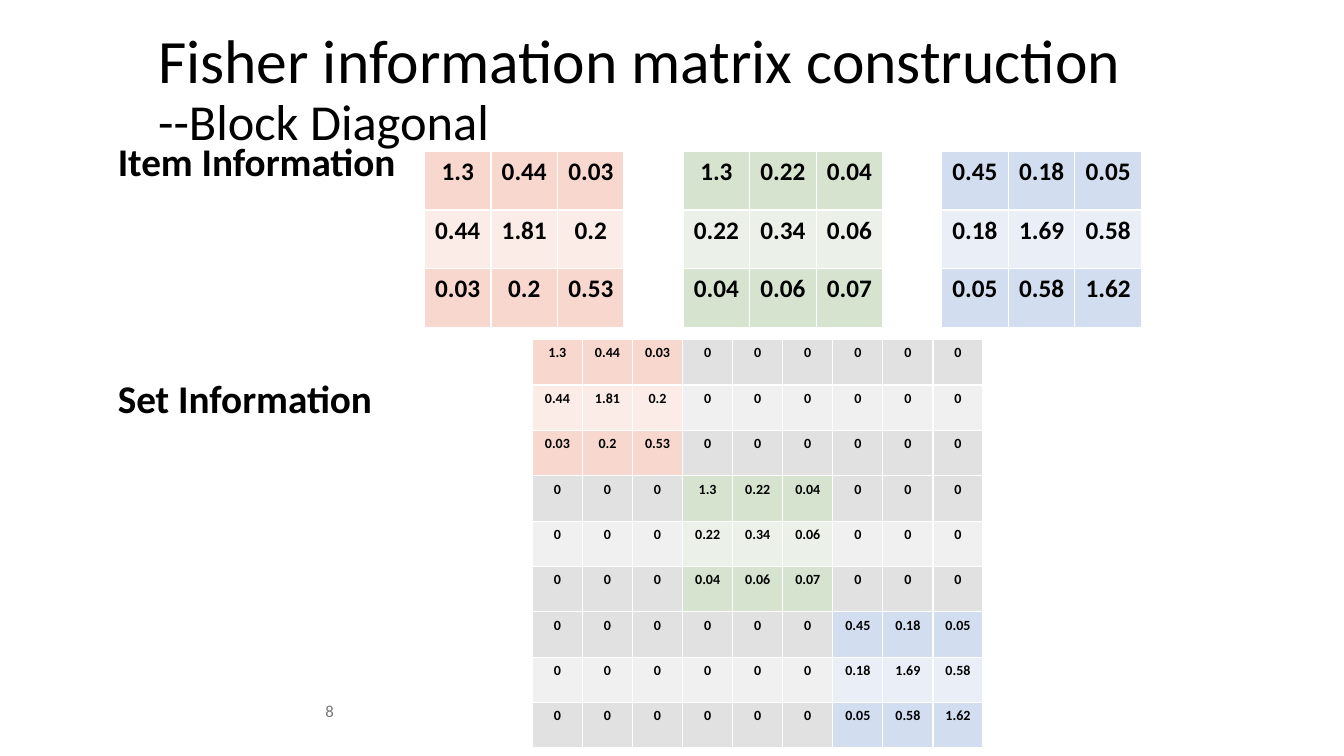
import pptx
import pptx.util
import pptx.dml.color
import pptx.enum.text
import lxml.etree
from pptx.oxml.ns import qn

Inches, Pt = pptx.util.Inches, pptx.util.Pt
RGB = pptx.dml.color.RGBColor
ALIGN = pptx.enum.text.PP_ALIGN
ANCHOR = pptx.enum.text.MSO_ANCHOR

BLACK = RGB(0x00, 0x00, 0x00)
GRAY = RGB(0x79, 0x79, 0x79)
# Colours of odd and even rows
ORANGES = (RGB(0xF8, 0xD7, 0xCE), RGB(0xFC, 0xEC, 0xE8))
GREENS = (RGB(0xD5, 0xE3, 0xCF), RGB(0xEB, 0xF1, 0xE9))
BLUES = (RGB(0xD2, 0xDE, 0xEF), RGB(0xEA, 0xEF, 0xF7))
GRAYS = (RGB(0xE1, 0xE1, 0xE1), RGB(0xF0, 0xF0, 0xF0))

TITLE = [("Fisher information matrix construction", 44), ("--Block Diagonal", 36)]
LABELS = ["Item Information", "Set Information"]
PAGE = "8"
ITEMS = [
    ([["1.3", "0.44", "0.03"], ["0.44", "1.81", "0.2"], ["0.03", "0.2", "0.53"]], ORANGES),
    ([["1.3", "0.22", "0.04"], ["0.22", "0.34", "0.06"], ["0.04", "0.06", "0.07"]], GREENS),
    ([["0.45", "0.18", "0.05"], ["0.18", "1.69", "0.58"], ["0.05", "0.58", "1.62"]], BLUES),
]
ZERO = ([["0"] * 3] * 3, GRAYS)

# Left, top, block width, block height, in inches
ITEM_LEFT, ITEM_TOP, ITEM_W, ITEM_H = 4.21, 1.5, 1.98, 1.75
ITEM_PITCH = 2.565
SET_LEFT, SET_TOP, SET_W, SET_H = 5.28, 3.37, 1.49, 1.35


def style(font, size, color=BLACK, bold=False):
    values = {"name": "Calibri", "size": Pt(size), "bold": bold}
    for name, value in values.items():
        setattr(font, name, value)
    font.color.rgb = color


def add_text_box(s, left, top, width, height, anchor=ANCHOR.TOP):
    tf = s.shapes.add_textbox(*map(Inches, (left, top, width, height))).text_frame
    tf.word_wrap = True
    tf.vertical_anchor = anchor
    return tf


def add_white_borders(cell):
    """Put a 1 pt white line on each side, ahead of the cell's fill."""
    tc_pr = cell._tc.get_or_add_tcPr()
    for i, side in enumerate(("lnL", "lnR", "lnT", "lnB")):
        ln = lxml.etree.Element(qn("a:" + side), w=str(Pt(1)))
        fill = lxml.etree.SubElement(ln, qn("a:solidFill"))
        lxml.etree.SubElement(fill, qn("a:srgbClr"), val="FFFFFF")
        tc_pr.insert(i, ln)


def add_matrix(s, matrix, left, top, width, height, size):
    values, fills = matrix
    n = len(values)
    table = s.shapes.add_table(n, n, *map(Inches, (left, top, width, height))).table
    table.first_row = table.horz_banding = False
    for r, row in enumerate(values):
        for c, value in enumerate(row):
            cell = table.cell(r, c)
            cell.margin_left = cell.margin_right = Inches(0.05)
            cell.fill.solid()
            cell.fill.fore_color.rgb = fills[r % 2]
            add_white_borders(cell)
            p = cell.text_frame.paragraphs[0]
            p.text = value
            p.alignment = ALIGN.CENTER
            style(p.font, size, bold=True)


def main():
    prs = pptx.Presentation()
    prs.slide_width, prs.slide_height = Inches(13.33), Inches(7.5)
    s = prs.slides.add_slide(prs.slide_layouts[6])

    p = add_text_box(s, 1.47, 0.25, 11.14, 1.13).paragraphs[0]
    p.line_spacing = 0.9
    for i, (text, size) in enumerate(TITLE):
        if i:
            p.add_line_break()
        r = p.add_run()
        r.text = text
        style(r.font, size)

    tf = add_text_box(s, 1.07, 1.31, 3.13, 2.93)
    for i, label in enumerate(LABELS):
        p = tf.add_paragraph() if i else tf.paragraphs[0]
        p.text = label
        style(p.font, 28, bold=True)
        if i:
            p.space_before = Pt(136)

    for i, item in enumerate(ITEMS):
        add_matrix(s, item, ITEM_LEFT + i * ITEM_PITCH, ITEM_TOP, ITEM_W, ITEM_H, 18)

    for row, item in enumerate(ITEMS):
        for col in range(len(ITEMS)):
            add_matrix(s, item if row == col else ZERO,
                       SET_LEFT + col * SET_W, SET_TOP + row * SET_H, SET_W, SET_H, 10)

    p = add_text_box(s, 0.41, 6.85, 3, 0.4, ANCHOR.MIDDLE).paragraphs[0]
    p.text = PAGE
    p.alignment = ALIGN.RIGHT
    style(p.font, 12, GRAY)

    prs.save("out.pptx")


if __name__ == "__main__":
    main()
